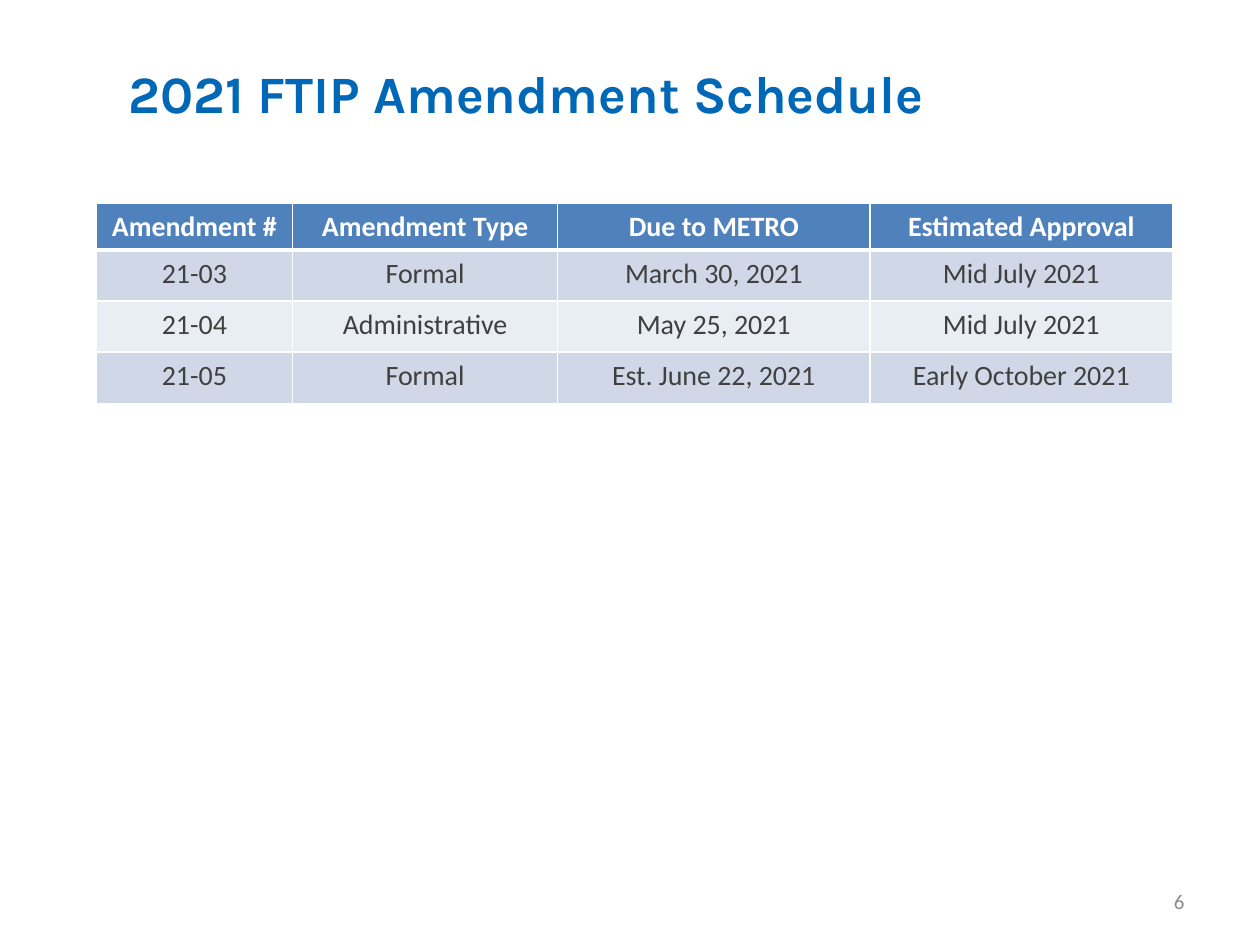
from lxml.etree import SubElement
from pptx import Presentation
from pptx.dml.color import RGBColor
from pptx.enum.text import MSO_ANCHOR, PP_ALIGN
from pptx.oxml.ns import qn
from pptx.util import Cm, Pt


def color(hex_value):
    return RGBColor.from_string(hex_value)


def write(frame, text, *, size, fill, font="Calibri", bold=False,
          align=PP_ALIGN.LEFT, anchor=MSO_ANCHOR.MIDDLE):
    frame.word_wrap = True
    frame.vertical_anchor = anchor
    paragraph = frame.paragraphs[0]
    paragraph.alignment = align
    run = paragraph.add_run()
    run.text = text
    run.font.name = font
    run.font.size = Pt(size)
    run.font.bold = bold
    run.font.color.rgb = color(fill)


class ScheduleSlide:
    accent = "0068B6"
    header_fill = "4F81BD"
    band_fills = ("D0D8E8", "E9EDF4")
    body_text = "404040"
    muted = "8C8C8C"
    white = "FFFFFF"

    def __init__(self, deck):
        self.slide = deck.slides.add_slide(deck.slide_layouts[5])
        self.slide.background.fill.solid()
        self.slide.background.fill.fore_color.rgb = color(self.white)

    def title(self, text, left, top, width, height):
        heading = self.slide.shapes.title
        heading.left, heading.top = Cm(left), Cm(top)
        heading.width, heading.height = Cm(width), Cm(height)
        write(heading.text_frame, text, size=30, fill=self.accent,
              font="Karla", bold=True)

    def page_number(self, text, left, top, width, height):
        number = self.slide.shapes.add_textbox(
            Cm(left), Cm(top), Cm(width), Cm(height))
        write(number.text_frame, text, size=12, fill=self.muted,
              align=PP_ALIGN.RIGHT)

    def cell_border(self, cell, side, points):
        line = SubElement(cell._tc.get_or_add_tcPr(), qn(f"a:{side}"),
                          w=str(Pt(points)))
        solid = SubElement(line, qn("a:solidFill"))
        SubElement(solid, qn("a:srgbClr"), val=self.white)

    def table(self, rows, left, top, column_widths, row_heights):
        schedule = self.slide.shapes.add_table(
            len(rows), len(column_widths), Cm(left), Cm(top),
            Cm(sum(column_widths)), Cm(sum(row_heights))).table
        for column, width in zip(schedule.columns, column_widths):
            column.width = Cm(width)
        for index, (values, height) in enumerate(zip(rows, row_heights)):
            schedule.rows[index].height = Cm(height)
            is_header = index == 0
            row_fill = self.header_fill if is_header else self.band_fills[(index - 1) % 2]
            for column, value in enumerate(values):
                cell = schedule.cell(index, column)
                self.cell_border(cell, "lnL", 1)
                self.cell_border(cell, "lnR", 1)
                self.cell_border(cell, "lnT", 3 if index == 1 else 1)
                self.cell_border(cell, "lnB", 3 if is_header else 1)
                cell.fill.solid()
                cell.fill.fore_color.rgb = color(row_fill)
                write(cell.text_frame, value, size=16, bold=is_header,
                      fill=self.white if is_header else self.body_text,
                      align=PP_ALIGN.CENTER, anchor=MSO_ANCHOR.TOP)


def main():
    deck = Presentation()
    deck.slide_width, deck.slide_height = Cm(25.4), Cm(19.05)
    page = ScheduleSlide(deck)
    page.page_number("6", 18.2, 17.66, 5.93, 1.01)
    amendments = [
        ("Amendment #", "Amendment Type", "Due to METRO", "Estimated Approval"),
        ("21-03", "Formal", "March 30, 2021", "Mid July 2021"),
        ("21-04", "Administrative", "May 25, 2021", "Mid July 2021"),
        ("21-05", "Formal", "Est. June 22, 2021", "Early October 2021"),
    ]
    page.table(amendments, 1.94, 4.1, [3.96, 5.34, 6.3, 6.1],
               [0.94] + [1.03] * 3)
    page.title("2021 FTIP Amendment Schedule", 2.34, 0.72, 22.02, 2.28)
    deck.save("out.pptx")


if __name__ == "__main__":
    main()
